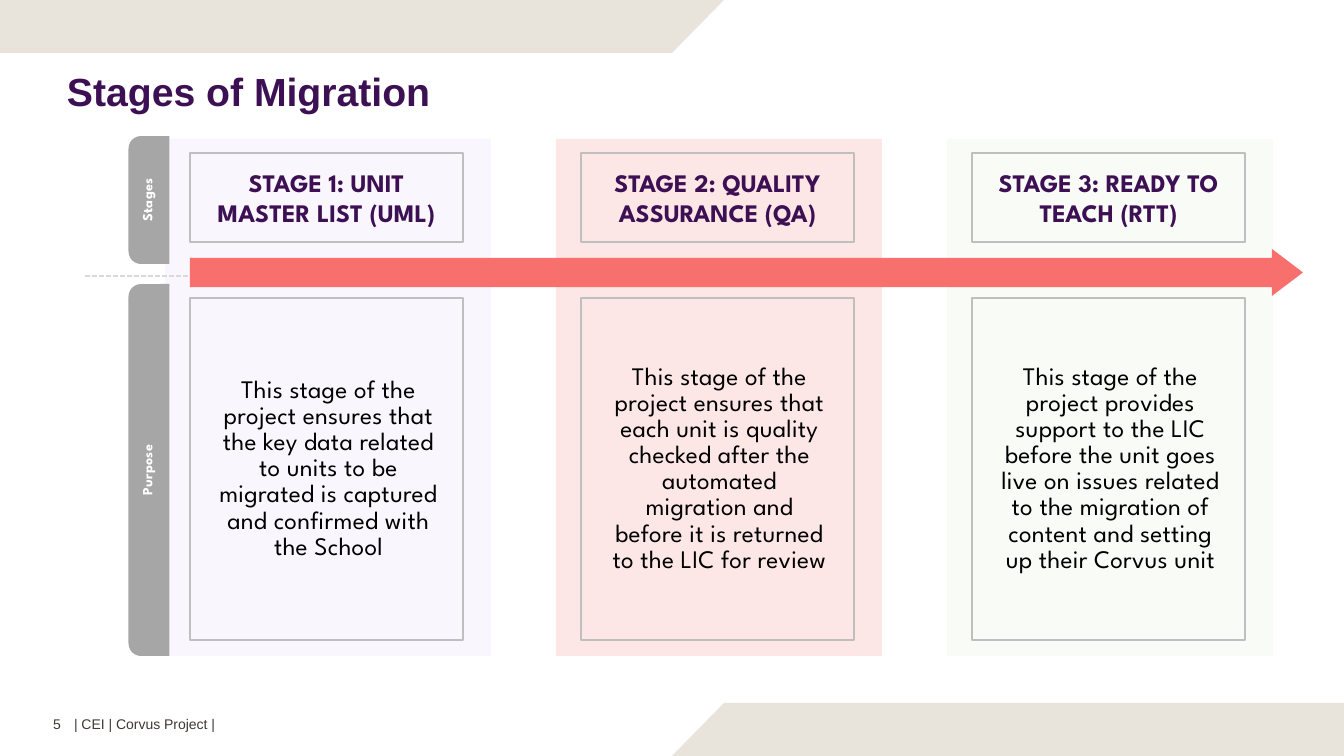
from lxml import etree
from pptx import Presentation
from pptx.dml.color import RGBColor
from pptx.enum.dml import MSO_LINE
from pptx.enum.shapes import MSO_CONNECTOR, MSO_SHAPE
from pptx.enum.text import MSO_ANCHOR, PP_ALIGN
from pptx.oxml.ns import qn
from pptx.util import Pt

PX = 914400 / 100.8
RECT, TAB, ARROW = MSO_SHAPE.RECTANGLE, MSO_SHAPE.ROUND_2_SAME_RECTANGLE, MSO_SHAPE.RIGHT_ARROW
CENTER, LEFT = PP_ALIGN.CENTER, PP_ALIGN.LEFT
MIDDLE, TOP = MSO_ANCHOR.MIDDLE, MSO_ANCHOR.TOP

BEIGE = RGBColor(0xE8, 0xE3, 0xDB)
PURPLE = RGBColor(0x3C, 0x10, 0x53)
CORAL = RGBColor(0xF8, 0x70, 0x6D)
BLACK = RGBColor(0x00, 0x00, 0x00)
WHITE = RGBColor(0xFF, 0xFF, 0xFF)
INK = RGBColor(0x3D, 0x39, 0x35)
TAB_GREY = RGBColor(0xA6, 0xA6, 0xA6)
BOX_GREY = RGBColor(0xBF, 0xBF, 0xBF)
DASH_GREY = RGBColor(0xD9, 0xD9, 0xD9)
LILAC = RGBColor(0xD7, 0xA9, 0xEE)
RED = RGBColor(0xF2, 0x12, 0x0C)
GREEN = RGBColor(0xC5, 0xE0, 0xB4)

HEADING = {"name": "League Spartan", "size": Pt(18), "bold": True}
BODY = {"name": "League Spartan", "size": Pt(18), "bold": False}
TAB_LABEL = {"name": "League Spartan", "size": Pt(10), "bold": True}
TITLE = {"name": "Arial", "size": Pt(28), "bold": True}
FOOTER = {"name": "Arial", "size": Pt(10), "bold": False}


def add_block(kind, box, fill=None, outline=None):
    """Add a preset shape at box (px), or a text box when kind is None."""
    place = [round(v * PX) for v in box]
    if kind is None:
        return slide.shapes.add_textbox(*place)
    block = slide.shapes.add_shape(kind, *place)
    block.shadow.inherit = False
    if fill is None:
        block.fill.background()
    else:
        block.fill.solid()
        block.fill.fore_color.rgb = fill
    if outline is None:
        block.line.fill.background()
    else:
        block.line.color.rgb = outline
        block.line.width = Pt(1.25)
    return block


def write(block, text, style, color, align=CENTER, anchor=MIDDLE, insets=(10, 5, 10, 5),
          leading=None, tracking=0):
    """Put one formatted paragraph in block; insets are left, top, right, bottom in px."""
    frame = block.text_frame
    frame.word_wrap = True
    frame.vertical_anchor = anchor
    for side, inset in zip(("left", "top", "right", "bottom"), insets):
        setattr(frame, "margin_" + side, round(inset * PX))
    paragraph = frame.paragraphs[0]
    paragraph.alignment = align
    paragraph.line_spacing = leading
    run = paragraph.add_run()
    run.text = text
    for key, value in style.items():
        setattr(run.font, key, value)
    run.font.color.rgb = color
    if tracking:
        run._r.get_or_add_rPr().set("spc", str(tracking))


prs = Presentation()
prs.slide_width = round(1344 * PX)
prs.slide_height = round(756 * PX)
slide = prs.slides.add_slide(prs.slide_layouts[6])

# Beige bands at the top and bottom
for band_corners in (
    [(0, 0), (0, 53), (672, 53), (724, 0)],
    [(1344, 756), (1344, 703), (724, 703), (672, 756)],
):
    outline = slide.shapes.build_freeform(*band_corners[0], scale=PX)
    outline.add_line_segments(band_corners[1:], close=True)
    band = outline.convert_to_shape()
    band.shadow.inherit = False
    band.fill.solid()
    band.fill.fore_color.rgb = BEIGE
    band.line.fill.background()

# Title and footer
for text, box, style, color, leading in (
    ("Stages of Migration", (57, 68, 640, 48), TITLE, PURPLE, 0.9),
    ("5", (43, 711, 49, 27), FOOTER, INK, None),
    ("| CEI | Corvus Project |", (64, 711, 341, 27), FOOTER, INK, None),
):
    write(add_block(None, box), text, style, color, LEFT, TOP, leading=leading)

# Tinted stage columns
COLUMN_LEFT, COLUMN_PITCH = 165, 391
stages = (
    (LILAC, "STAGE 1: UNIT MASTER LIST (UML)",
     "This stage of the project ensures that the key data related to units to be "
     "migrated is captured and confirmed with the School"),
    (RED, "STAGE 2: QUALITY ASSURANCE (QA)",
     "This stage of the project ensures that each unit is quality checked after the "
     "automated migration and before it is returned to the LIC for review"),
    (GREEN, "STAGE 3: READY TO TEACH (RTT)",
     "This stage of the project provides support to the LIC before the unit goes live "
     "on issues related to the migration of content and setting up their Corvus unit"),
)
for i, (tint, heading, purpose) in enumerate(stages):
    left = COLUMN_LEFT + i * COLUMN_PITCH
    column = add_block(RECT, (left, 139, 326, 517), tint)
    tint_element = column._element.spPr.find(qn("a:solidFill"))[0]
    etree.SubElement(tint_element, qn("a:alpha"), val="10000")
    heading_box = add_block(RECT, (left + 25, 153, 273, 89), outline=BOX_GREY)
    write(heading_box, heading, HEADING, PURPLE)
    purpose_box = add_block(RECT, (left + 25, 298, 273, 342), outline=BOX_GREY)
    write(purpose_box, purpose, BODY, BLACK, insets=(28, 5, 24, 5),
          leading=Pt(18.6), tracking=20)

# Dashed divider between the two rows
divider = slide.shapes.add_connector(
    MSO_CONNECTOR.STRAIGHT, *[round(v * PX) for v in (85, 276, 1265, 276)])
divider.line.color.rgb = DASH_GREY
divider.line.width = Pt(1.25)
divider.line.dash_style = MSO_LINE.SQUARE_DOT
etree.SubElement(divider._element.spPr, qn("a:effectLst"))

# Row tabs, turned to read upwards
TAB_CENTER, TAB_DEPTH = 149, 41
for label, middle, length in (("Stages", 200, 128), ("Purpose", 470, 372)):
    tab = add_block(
        TAB, (TAB_CENTER - length / 2, middle - TAB_DEPTH / 2, length, TAB_DEPTH), TAB_GREY)
    tab.rotation = 270
    tab.adjustments[0] = 0.305
    tab.adjustments[1] = 0
    write(tab, label, TAB_LABEL, WHITE, insets=(0, 0, 0, 8), tracking=20)

# Progress arrow
progress = add_block(ARROW, (190, 249, 1113, 47), CORAL)
progress.adjustments[0] = 0.62
progress.adjustments[1] = 0.66

prs.save("out.pptx")
